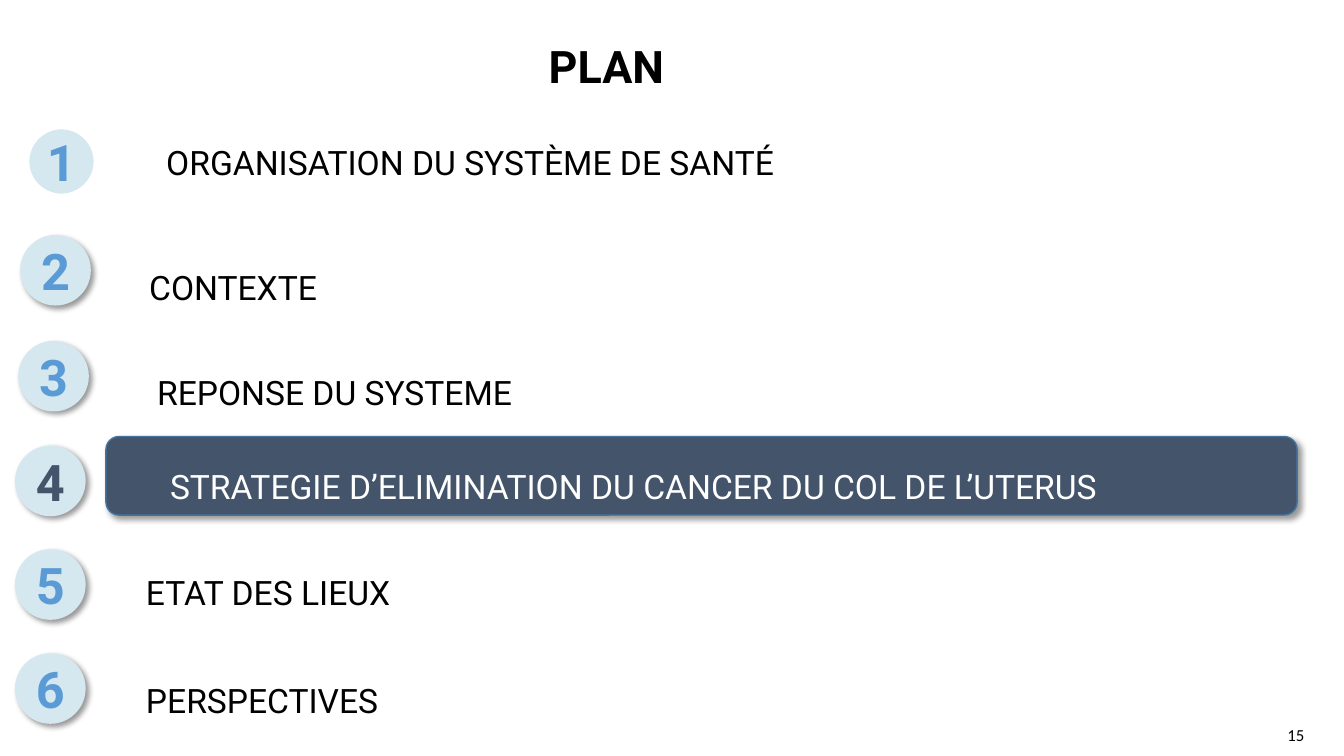
from lxml import etree
from pptx import Presentation
from pptx.dml.color import RGBColor
from pptx.enum.shapes import MSO_SHAPE
from pptx.enum.text import MSO_ANCHOR, PP_ALIGN
from pptx.oxml.ns import qn
from pptx.util import Cm, Pt

OVAL = MSO_SHAPE.OVAL
ROUNDED_RECTANGLE = MSO_SHAPE.ROUNDED_RECTANGLE
MIDDLE = MSO_ANCHOR.MIDDLE
CENTER, JUSTIFY = PP_ALIGN.CENTER, PP_ALIGN.JUSTIFY

BLACK = RGBColor(0x00, 0x00, 0x00)
WHITE = RGBColor(0xFF, 0xFF, 0xFF)
NAVY = RGBColor(0x44, 0x54, 0x6A)
BLUE = RGBColor(0x5B, 0x9B, 0xD5)
BORDER_BLUE = RGBColor(0x43, 0x73, 0x9E)
PALE_BLUE = RGBColor(0xD5, 0xE7, 0xEF)

FONT = "Roboto"
TITLE_ONLY_LAYOUT = 5
CURRENT = 4
BADGE_SIZE = 1.78
LABEL_HEIGHT = 1.6
LABEL_WIDTH = 30.02

# Heading, badge left and top, label left and top (cm)
CHAPTERS = [
    ("ORGANISATION DU SYSTÈME DE SANTÉ", 0.66, 3.18, 2.67, 2.95),
    ("CONTEXTE", 0.51, 5.92, 2.24, 6.1),
    ("REPONSE DU SYSTEME", 0.46, 8.59, 2.44, 8.74),
    ("STRATEGIE D’ELIMINATION DU CANCER DU COL DE L’UTERUS", 0.38, 11.23, 2.67, 11),
    ("ETAT DES LIEUX", 0.38, 13.84, 2.16, 13.79),
    ("PERSPECTIVES", 0.38, 16.46, 2.16, 16.51),
]


def write(shape, text, size, color, align, bold=False, font=FONT):
    """Put one formatted paragraph into a shape and return it."""
    frame = shape.text_frame
    frame.word_wrap = True
    frame.text = text
    paragraph = frame.paragraphs[0]
    paragraph.alignment = align
    run_font = paragraph.runs[0].font
    run_font.name = font
    run_font.size = Pt(size)
    run_font.bold = bold
    run_font.color.rgb = color
    return paragraph


def add_shadow(shape):
    """Give the shape a soft shadow to the lower right."""
    effects = shape.element.spPr.find(qn("a:effectLst"))
    shadow = etree.SubElement(
        effects, qn("a:outerShdw"), blurRad=str(Pt(4)), dist=str(Pt(3)),
        dir="2700000", algn="tl", rotWithShape="0")
    color = etree.SubElement(shadow, qn("a:srgbClr"), val=str(BLACK))
    etree.SubElement(color, qn("a:alpha"), val="40000")


def add_filled_shape(slide, kind, left, top, width, height, fill):
    shape = slide.shapes.add_shape(kind, Cm(left), Cm(top), Cm(width), Cm(height))
    shape.fill.solid()
    shape.fill.fore_color.rgb = fill
    shape.line.fill.background()
    shape.shadow.inherit = False
    shape.text_frame.vertical_anchor = MIDDLE
    return shape


def set_outline(shape, color, width):
    shape.line.color.rgb = color
    shape.line.width = Pt(width)


def add_badge(slide, number, left, top):
    badge = add_filled_shape(slide, OVAL, left, top, BADGE_SIZE, BADGE_SIZE, PALE_BLUE)
    write(badge, str(number), 36, NAVY if number == CURRENT else BLUE, CENTER, bold=True)
    if number == 1:
        set_outline(badge, WHITE, 4.5)
    else:
        add_shadow(badge)


def add_label(slide, text, left, top, highlighted):
    if highlighted:
        label = add_filled_shape(
            slide, ROUNDED_RECTANGLE, left, top, LABEL_WIDTH, 1.98, NAVY)
        set_outline(label, BORDER_BLUE, 1)
        add_shadow(label)
    else:
        label = slide.shapes.add_textbox(
            Cm(left), Cm(top), Cm(LABEL_WIDTH), Cm(LABEL_HEIGHT))
    paragraph = write(label, text, 24, WHITE if highlighted else BLACK, JUSTIFY)
    paragraph.level = 1
    paragraph.line_spacing = 1.5
    properties = paragraph._p.get_or_add_pPr()
    properties.set("marL", str(Cm(1.27)))
    properties.set("indent", "0")


def add_title(slide, text):
    title = slide.shapes.title
    title.left, title.top = Cm(1.19), Cm(0.48)
    title.width, title.height = Cm(28.47), Cm(2.54)
    title.text_frame.vertical_anchor = MIDDLE
    write(title, text, 32, BLACK, CENTER, bold=True).line_spacing = 0.9


def add_page_number(slide, number):
    box = slide.shapes.add_textbox(Cm(31.9), Cm(18.08), Cm(1.52), Cm(0.86))
    box.text_frame.vertical_anchor = MIDDLE
    write(box, str(number), 12, BLACK, CENTER, font="Calibri")


def main():
    presentation = Presentation()
    presentation.slide_width = Cm(33.87)
    presentation.slide_height = Cm(19.05)
    slide = presentation.slides.add_slide(presentation.slide_layouts[TITLE_ONLY_LAYOUT])

    add_title(slide, "PLAN ")

    # Numbered chapters, the current one highlighted
    for number, chapter in enumerate(CHAPTERS, start=1):
        text, badge_left, badge_top, label_left, label_top = chapter
        add_label(slide, text, label_left, label_top, number == CURRENT)
        add_badge(slide, number, badge_left, badge_top)

    add_page_number(slide, 15)
    presentation.save("out.pptx")


if __name__ == "__main__":
    main()
